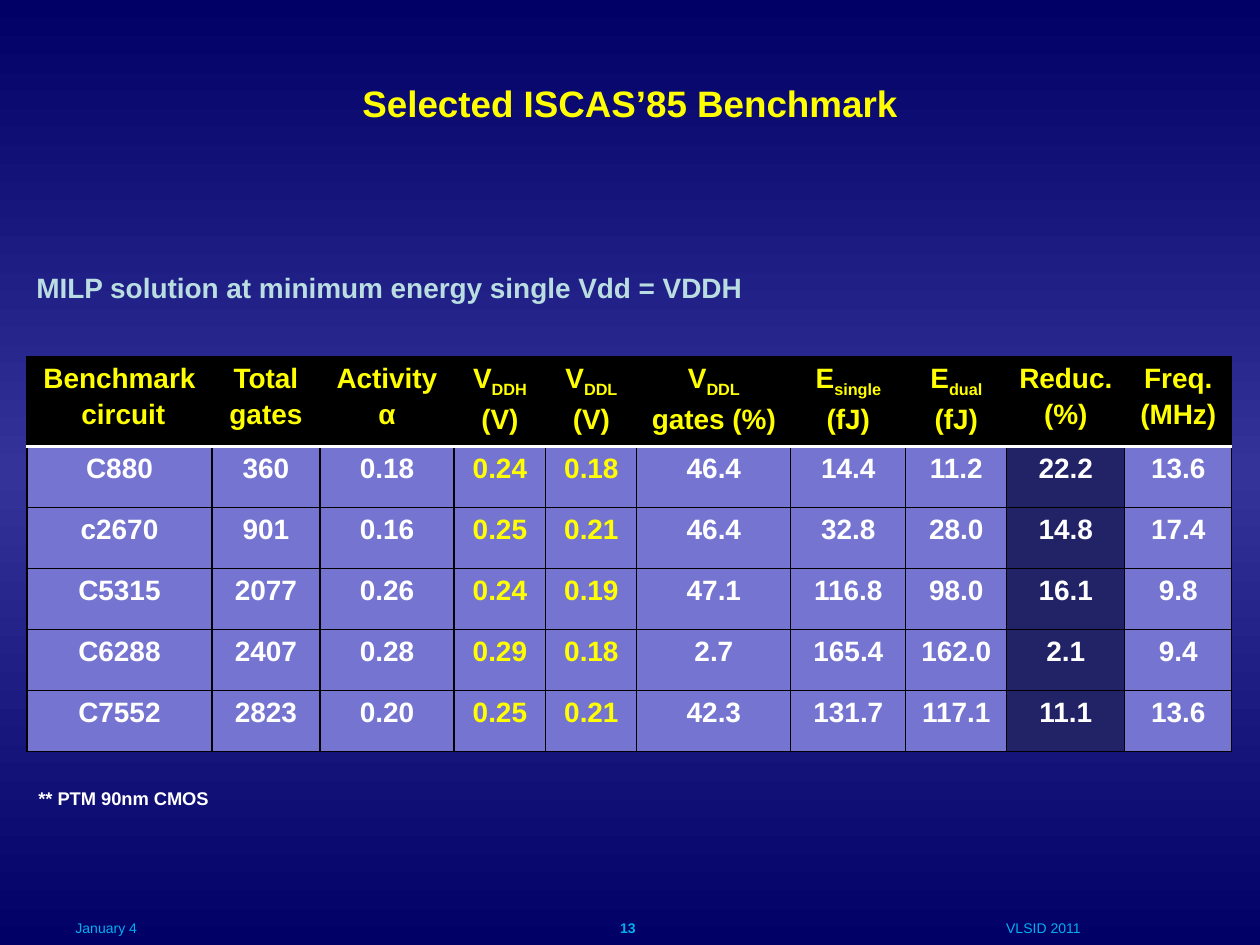
from copy import deepcopy
from dataclasses import dataclass

from pptx import Presentation
from pptx.dml.color import RGBColor as RGB
from pptx.enum.text import MSO_ANCHOR as Anchor, MSO_AUTO_SIZE as AutoSize, PP_ALIGN as Align
from pptx.oxml.ns import qn
from pptx.oxml.xmlchemy import OxmlElement
from pptx.util import Pt


@dataclass(frozen=True)
class Theme:
    font: str = "Arial"
    edge: str = "000066"
    middle: str = "333399"
    yellow: str = "FFFF00"
    pale: str = "BADDE1"
    cyan: str = "00B0F0"
    white: str = "FFFFFF"
    black: str = "000000"
    cell: str = "7575D1"
    strong: str = "222267"
    title: float = 21
    body: float = 16
    note: float = 10.5
    footer: float = 8


T = Theme()
PX = 914400 / 126


def emu(*lengths):
    return [round(n * PX) for n in lengths]


def write(p, text, size=T.body, color=T.white, bold=True, align=Align.LEFT, before=0):
    """Fill a paragraph; text after an underscore is set as a subscript."""
    p.alignment = align
    p.space_before = Pt(before)
    for i, part in enumerate(text.split("_")):
        r = p.add_run()
        r.text = part
        r.font.name, r.font.size, r.font.bold = T.font, Pt(size), bold
        r.font.color.rgb = RGB.from_string(color)
        if i:
            r._r.get_or_add_rPr().set("baseline", "-25000")


def add_border(cell, side, color, width):
    ln = OxmlElement(f"a:ln{side}")
    ln.set("w", str(Pt(width)))
    fill, clr = OxmlElement("a:solidFill"), OxmlElement("a:srgbClr")
    clr.set("val", color)
    fill.append(clr)
    ln.append(fill)
    cell._tc.get_or_add_tcPr().append(ln)


class Deck:
    def __init__(self, width, height):
        self.prs = Presentation()
        self.prs.slide_width, self.prs.slide_height = emu(width, height)
        self.s = self.prs.slides.add_slide(self.prs.slide_layouts[5])

    def background(self, *colors):
        fill = self.s.background.fill
        fill.gradient()
        fill.gradient_angle = 90
        gs_list = next(self.s._element.iter(qn("a:gsLst")))
        while len(gs_list) < len(colors):
            gs_list.append(deepcopy(gs_list[0]))
        for i, (stop, color) in enumerate(zip(fill.gradient_stops, colors)):
            stop.position = i / (len(colors) - 1)
            stop.color.rgb = RGB.from_string(color)

    def title(self, text, box, inset_top):
        sp = self.s.shapes.title
        sp.left, sp.top, sp.width, sp.height = emu(*box)
        tf = sp.text_frame
        tf.auto_size = AutoSize.NONE
        tf.vertical_anchor = Anchor.MIDDLE
        tf.margin_top = emu(inset_top)[0]
        write(tf.paragraphs[0], text, size=T.title, color=T.yellow, align=Align.CENTER)

    def text(self, text, box, anchor=Anchor.BOTTOM, **fmt):
        tf = self.s.shapes.add_textbox(*emu(*box)).text_frame
        tf.word_wrap = True
        tf.vertical_anchor = anchor
        tf.margin_top = tf.margin_bottom = 0
        write(tf.paragraphs[0], text, **fmt)

    def table(self, header, rows, left, top, widths, heights, yellow_cols, strong_col):
        frame = self.s.shapes.add_table(len(heights), len(widths),
                                        *emu(left, top, sum(widths), sum(heights)))
        table = frame.table
        table.first_row = table.horz_banding = False
        for col, width in zip(table.columns, emu(*widths)):
            col.width = width
        for row, height in zip(table.rows, emu(*heights)):
            row.height = height
        for i, values in enumerate([header, *rows]):
            for j, value in enumerate(values):
                if i == 0:
                    fill, color = T.black, T.yellow
                else:
                    fill = T.strong if j == strong_col else T.cell
                    color = T.yellow if j in yellow_cols else T.white
                self.cell(table.cell(i, j), value, fill, color, i)

    def cell(self, cell, value, fill, color, row):
        rule, thin = (T.white, 2), (T.black, 0.75)
        for side in "LRTB":
            under_header = (side, row) in (("B", 0), ("T", 1))
            add_border(cell, side, *(rule if under_header else thin))
        cell.fill.solid()
        cell.fill.fore_color.rgb = RGB.from_string(fill)
        cell.margin_left = cell.margin_right = emu(6)[0]
        tf = cell.text_frame
        for k, line in enumerate(value.split("\n")):
            p = tf.add_paragraph() if k else tf.paragraphs[0]
            write(p, line, color=color, align=Align.CENTER, before=3)


HEADER = ["Benchmark\n circuit", "Total\ngates", "Activity\nα", "V_DDH\n(V)", "V_DDL\n(V)",
          "V_DDL\ngates (%)", "E_single\n(fJ)", "E_dual\n(fJ)", "Reduc.\n(%)", "Freq.\n(MHz)"]
ROWS = [
    ["C880", "360", "0.18", "0.24", "0.18", "46.4", "14.4", "11.2", "22.2", "13.6"],
    ["c2670", "901", "0.16", "0.25", "0.21", "46.4", "32.8", "28.0", "14.8", "17.4"],
    ["C5315", "2077", "0.26", "0.24", "0.19", "47.1", "116.8", "98.0", "16.1", "9.8"],
    ["C6288", "2407", "0.28", "0.29", "0.18", "2.7", "165.4", "162.0", "2.1", "9.4"],
    ["C7552", "2823", "0.20", "0.25", "0.21", "42.3", "131.7", "117.1", "11.1", "13.6"],
]


def main():
    deck = Deck(1260, 945)
    deck.background(T.edge, T.middle, T.edge)

    # Title and lead-in
    deck.title("Selected ISCAS’85 Benchmark", (63, 0, 1134, 158), inset_top=53)
    deck.text("MILP solution at minimum energy single Vdd = VDDH", (24, 232, 1212, 72),
              color=T.pale)

    # Benchmark results
    deck.table(HEADER, ROWS, 27, 357,
               widths=[185, 108, 134, 92, 91, 154, 115, 101, 118, 107],
               heights=[89] + [61] * len(ROWS), yellow_cols=(3, 4), strong_col=8)
    deck.text("** PTM 90nm CMOS", (26, 759, 444, 50), size=T.note)

    # Footer
    for text, left, width, bold, align in [
        ("January 4", 63, 294, False, Align.LEFT),
        ("VLSID 2011", 844, 399, False, Align.CENTER),
        ("13", 481, 294, True, Align.CENTER),
    ]:
        deck.text(text, (left, 895, width, 65), anchor=Anchor.MIDDLE, size=T.footer,
                  color=T.cyan, bold=bold, align=align)

    deck.prs.save("out.pptx")


if __name__ == "__main__":
    main()
